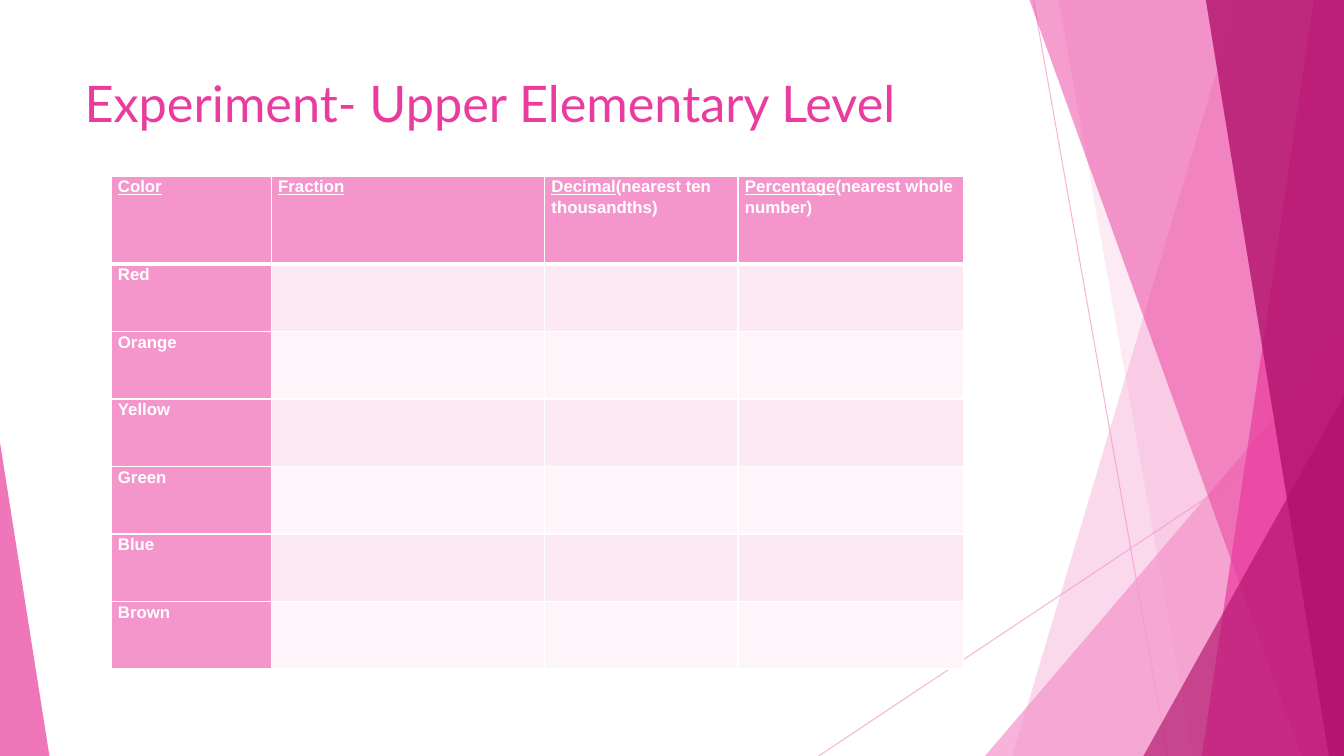
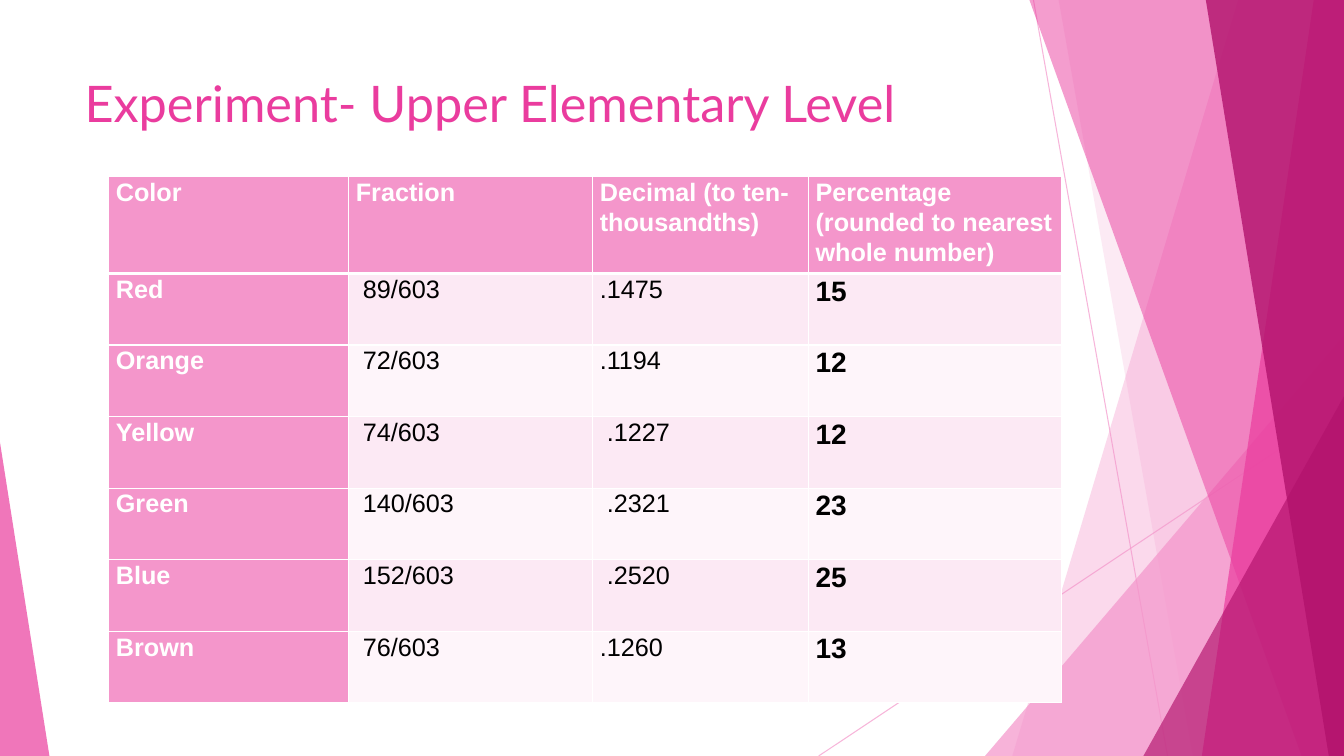
from dataclasses import dataclass

from lxml import etree
from pptx import Presentation
from pptx.dml import color as dml
from pptx.enum import shapes, text
from pptx.oxml import ns
from pptx.util import Inches, Pt

WIDE, HIGH = 13.33, 7.5
PALE, PINK, DARK, WHITE, BLACK = "F496CB", "EA3C9E", "B2126C", "FFFFFF", "000000"
STRIPES = "FCE9F4", "FEF5FA"
TITLE = "Experiment- Upper Elementary Level"
COLORS = "Red", "Orange", "Yellow", "Green", "Blue", "Brown"


@dataclass
class Band:
    """A facet from the top edge to the foot, filling all to its right."""
    top: float
    foot: float
    color: str
    alpha: int


@dataclass
class Wedge:
    """A right triangle standing on the foot of the slide."""
    left: float
    width: float
    height: float
    peak: int
    color: str
    alpha: int


@dataclass
class Ray:
    start: tuple[float, float]
    end: tuple[float, float]


@dataclass
class Sheet:
    left: float
    cols: tuple[float, ...]
    head: float
    row: float
    size: int
    under: bool
    heads: tuple[str, ...]
    values: tuple[tuple[str, ...], ...]


DECOR = (
    Ray((10.25, 0), (11.58, HIGH)),
    Ray((WIDE, 4.03), (8.12, HIGH)),
    Band(12.28, 10.04, PALE, 36),
    Band(10.5, 11.83, PALE, 20),
    Wedge(9.77, 3.56, 4.17, 1, PALE, 72),
    Band(10.21, 12.91, PINK, 50),
    Band(13.03, 11.92, PINK, 70),
    Band(11.96, 13.18, DARK, 80),
    Wedge(11.34, 1.99, 3.57, 1, DARK, 66),
    Wedge(0, 0.49, 3.11, 0, PINK, 70),
)

SHEETS = (
    Sheet(1.1, (1.59, 2.71, 1.92, 2.24), 0.87, 0.67, 12, True,
          ("Color", "Fraction", "Decimal(nearest ten thousandths)",
           "Percentage(nearest whole number)"),
          (("", "", ""),) * len(COLORS)),
    Sheet(1.08, (2.38, 2.42, 2.14, 2.51), 0.89, 0.71, 18, False,
          ("Color", "Fraction", "Decimal (to ten-thousandths)",
           "Percentage (rounded to nearest whole number)"),
          ((" 89/603", ".1475", "15"),
           (" 72/603", ".1194", "12"),
           (" 74/603", " .1227", "12"),
           (" 140/603", " .2321", "23"),
           (" 152/603", " .2520", "25"),
           (" 76/603", ".1260", "13"))),
)


def paint(form, tint: str) -> None:
    """Give a fill one solid colour."""
    form.solid()
    form.fore_color.rgb = dml.RGBColor.from_string(tint)


def fade(shape, alpha: int) -> None:
    """Set the opacity, in percent, of the shape's only colour."""
    tint = next(shape.element.iter(ns.qn("a:srgbClr")))
    etree.SubElement(tint, ns.qn("a:alpha")).set("val", str(alpha * 1000))


def draw_ray(slide, ray: Ray) -> None:
    line = slide.shapes.add_connector(
        shapes.MSO_CONNECTOR.STRAIGHT, *(Inches(n) for n in ray.start + ray.end))
    paint(line.line.fill, PALE)
    line.line.width = Pt(0.75)
    etree.SubElement(line.element.spPr, ns.qn("a:effectLst"))
    fade(line, 70)


def draw_facet(slide, part: Band | Wedge) -> None:
    if isinstance(part, Band):
        pen = slide.shapes.build_freeform(Inches(part.top), 0)
        corners = (WIDE, 0), (WIDE, HIGH), (part.foot, HIGH)
        pen.add_line_segments([(Inches(x), Inches(y)) for x, y in corners])
        shape = pen.convert_to_shape()
    else:
        shape = slide.shapes.add_shape(
            shapes.MSO_SHAPE.ISOSCELES_TRIANGLE, Inches(part.left),
            Inches(HIGH - part.height), Inches(part.width), Inches(part.height))
        shape.adjustments[0] = part.peak
    shape.shadow.inherit = False
    shape.line.fill.background()
    paint(shape.fill, part.color)
    fade(shape, part.alpha)


def style(run, size: int, tint: str, face: str = "Arial", bold: bool = False) -> None:
    run.font.size, run.font.name, run.font.bold = Pt(size), face, bold
    paint(run.font.fill, tint)


def add_title(slide) -> None:
    box = slide.shapes.add_textbox(Inches(0.74), Inches(0.67), Inches(9.4), Inches(1.44))
    frame = box.text_frame
    frame.word_wrap = True
    frame.vertical_anchor = text.MSO_ANCHOR.TOP
    frame.text = TITLE
    style(frame.paragraphs[0].runs[0], 36, PINK, "Lato")


def edge(cell, foot: float) -> None:
    """Draw white borders, the lower one foot points wide."""
    props = cell._tc.get_or_add_tcPr()
    for side, width in ("L", 1), ("R", 1), ("T", 1), ("B", foot):
        line = etree.SubElement(props, ns.qn("a:ln" + side), w=str(Pt(width)))
        fill = etree.SubElement(line, ns.qn("a:solidFill"))
        etree.SubElement(fill, ns.qn("a:srgbClr"), val=WHITE)


def fill_cell(cell, words: str, row: int, col: int, sheet: Sheet) -> None:
    label = row == 0 or col == 0
    edge(cell, 3 if row == 0 else 1)
    paint(cell.fill, PALE if label else STRIPES[(row - 1) % 2])
    cell.margin_left = cell.margin_right = Inches(0.07)
    cell.margin_top = cell.margin_bottom = 0
    if not words:
        return
    para = cell.text_frame.paragraphs[0]
    para.line_spacing = 1.07
    if row == 0 and sheet.under:
        name, mark, rest = words.partition("(")
        para.text = name
        para.runs[0].font.underline = True
        if mark:
            para.add_run().text = mark + rest
    else:
        para.text = words
    last = not label and col == len(sheet.cols) - 1
    for run in para.runs:
        style(run, 20 if last else sheet.size, WHITE if label else BLACK,
              bold=label or last)


def add_grid(slide, sheet: Sheet) -> None:
    rows = [sheet.heads] + [(name, *vals) for name, vals in zip(COLORS, sheet.values)]
    highs = [sheet.head] + [sheet.row] * len(COLORS)
    table = slide.shapes.add_table(
        len(rows), len(sheet.cols), Inches(sheet.left), Inches(1.75),
        Inches(sum(sheet.cols)), Inches(sum(highs))).table
    table.horz_banding = False
    for col, width in zip(table.columns, sheet.cols):
        col.width = Inches(width)
    for row, high in zip(table.rows, highs):
        row.height = Inches(high)
    for r, row in enumerate(rows):
        for c, words in enumerate(row):
            fill_cell(table.cell(r, c), words, r, c, sheet)


def main() -> None:
    deck = Presentation()
    deck.slide_width, deck.slide_height = Inches(WIDE), Inches(HIGH)
    for sheet in SHEETS:
        slide = deck.slides.add_slide(deck.slide_layouts[6])
        paint(slide.background.fill, WHITE)
        for part in DECOR:
            if isinstance(part, Ray):
                draw_ray(slide, part)
            else:
                draw_facet(slide, part)
        add_title(slide)
        add_grid(slide, sheet)
    deck.save("out.pptx")


if __name__ == "__main__":
    main()
